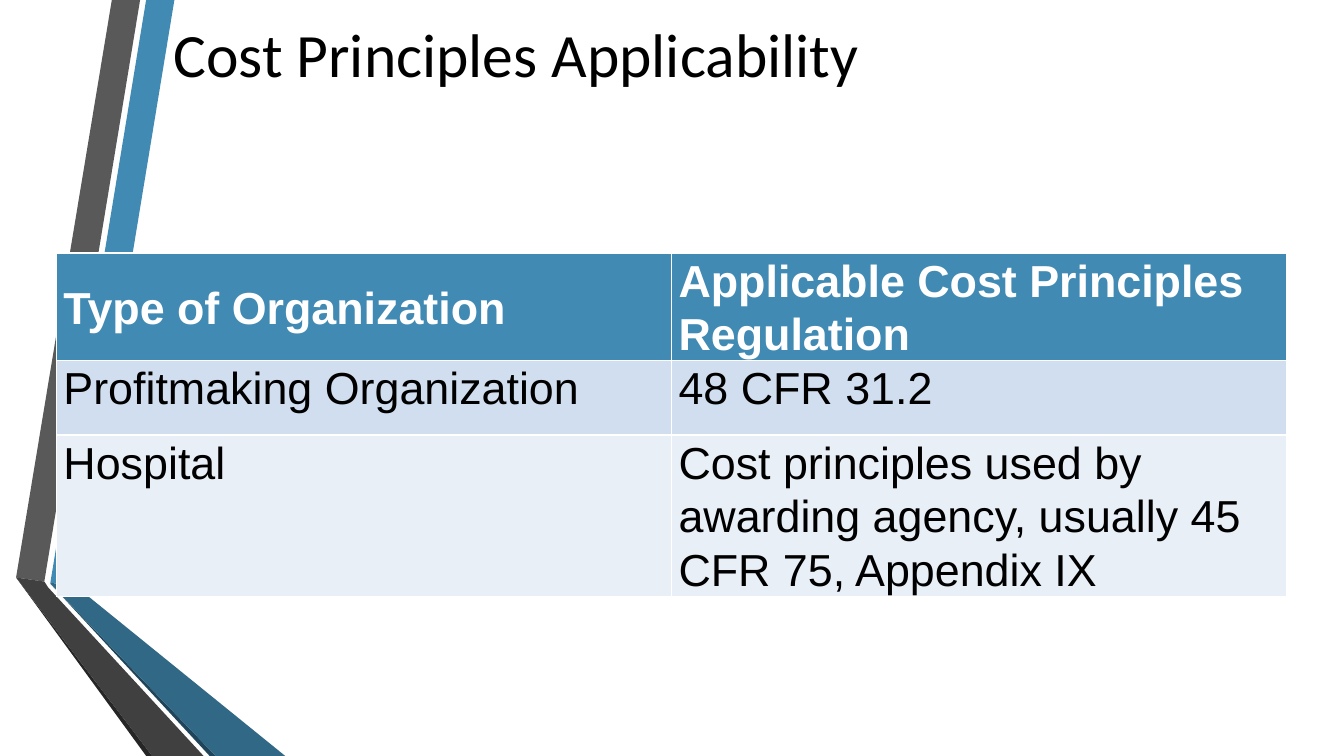
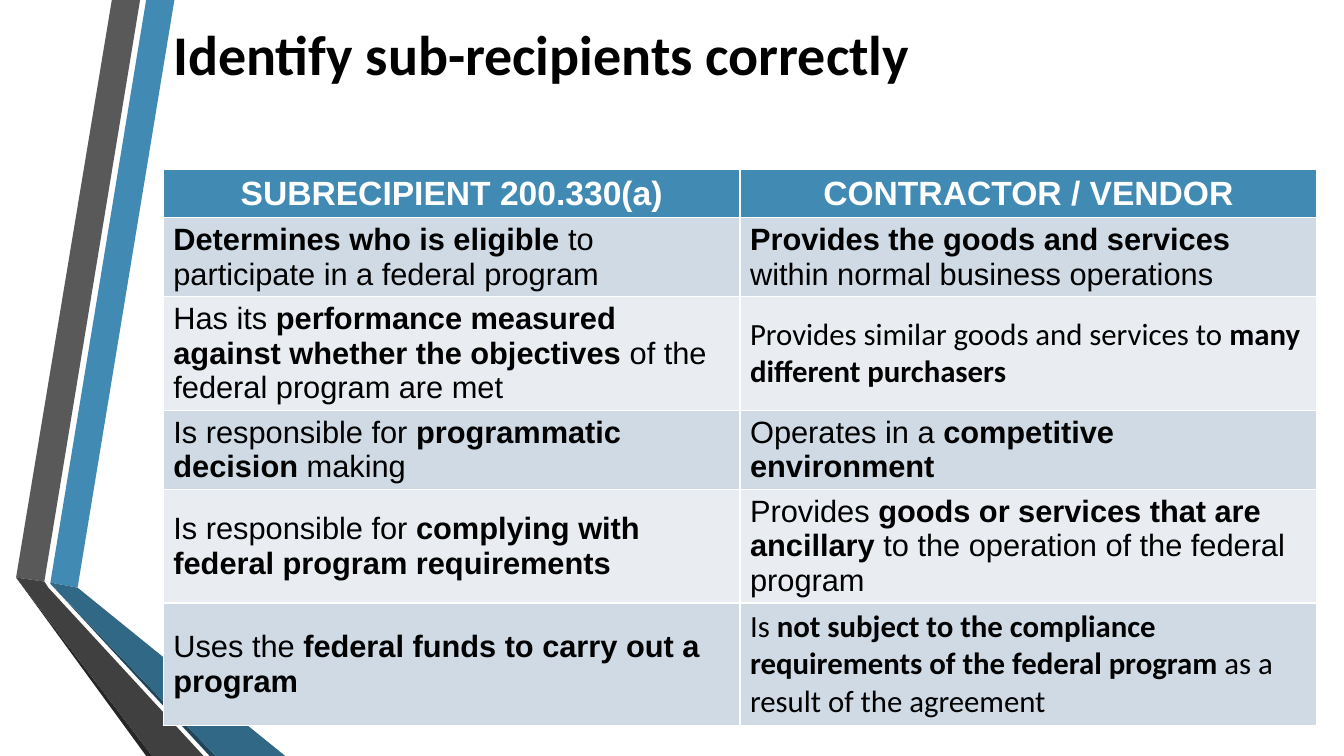
import pptx
import pptx.dml.color
import pptx.enum.text
import pptx.util

Inches = pptx.util.Inches
Pt = pptx.util.Pt
RGBColor = pptx.dml.color.RGBColor
Align = pptx.enum.text.PP_ALIGN
Anchor = pptx.enum.text.MSO_ANCHOR

BLUE = RGBColor(0x41, 0x8A, 0xB3)
MID_BLUE = RGBColor(0x31, 0x68, 0x86)
DARK_BLUE = RGBColor(0x20, 0x45, 0x5A)
GRAY = RGBColor(0x59, 0x59, 0x59)
MID_GRAY = RGBColor(0x40, 0x40, 0x40)
DARK_GRAY = RGBColor(0x26, 0x26, 0x26)
WHITE = RGBColor(0xFF, 0xFF, 0xFF)
BLACK = RGBColor(0, 0, 0)

RIBBONS = [
    (BLUE, [(0.5, 5.78), (0.77, 5.83), (1.73, 0), (1.45, 0)]),
    (GRAY, [(1.39, 0), (1.11, 0), (0.16, 5.73), (0.44, 5.77)]),
    (DARK_GRAY, [(0.16, 5.73), (1.45, 7.5), (1.51, 7.5)]),
    (DARK_BLUE, [(0.5, 5.79), (2.08, 7.5), (2.14, 7.5)]),
    (MID_BLUE, [(0.5, 5.79), (2.14, 7.5), (2.83, 7.5), (0.77, 5.83), (0.5, 5.78)]),
    (MID_GRAY, [(2.02, 7.5), (0.48, 5.83), (0.44, 5.77), (0.16, 5.73), (1.51, 7.5)]),
]

# Text between asterisks is bold; a cell given as a pair names its own font.
PAGES = [
    dict(
        title="Cost Principles Applicability", title_size=44, title_bold=False,
        place=(0.56, 2.51), column=6.1, heights=[1.06, 0.74, 1.6],
        sizes=(32, 32), header_align=Align.LEFT, body_anchor=Anchor.TOP,
        margins=(0.07, 0), spacing=1.07,
        bands=(RGBColor(0xD0, 0xDE, 0xEF), RGBColor(0xE9, 0xEF, 0xF7)),
        rows=[
            ("*Type of Organization*", "*Applicable Cost Principles Regulation*"),
            ("Profitmaking Organization", "48 CFR 31.2"),
            ("Hospital",
             "Cost principles used by awarding agency, usually 45 CFR 75, Appendix IX"),
        ],
    ),
    dict(
        title="Identify sub-recipients correctly", title_size=40, title_bold=True,
        place=(1.62, 1.68), column=5.72,
        heights=[0.48, 0.78, 1.12, 0.78, 1.13, 1.21],
        sizes=(24, 22), header_align=Align.CENTER, body_anchor=Anchor.MIDDLE,
        margins=(0.1, 0.05), spacing=1.0,
        bands=(RGBColor(0xCF, 0xDA, 0xE5), RGBColor(0xE9, 0xED, 0xF2)),
        rows=[
            ("*SUBRECIPIENT 200.330(a)*", "*CONTRACTOR / VENDOR*"),
            ("*Determines who is eligible* to participate in a federal program",
             "*Provides the goods and services* within normal business operations"),
            ("Has its *performance measured against whether the objectives*"
             " of the federal program are met",
             ("Calibri",
              "Provides similar goods and services to *many different purchasers*")),
            ("Is responsible for *programmatic decision* making",
             "Operates in a *competitive environment*"),
            ("Is responsible for *complying with federal program requirements*",
             "Provides *goods or services that are ancillary *"
             "to the operation of the federal program"),
            ("Uses the *federal funds to carry out a program*",
             ("Calibri",
              "Is *not subject to the compliance requirements of the federal program*"
              " as a result of the agreement")),
        ],
    ),
]


def add_span(para, text, font, size, color, bold):
    span = para.add_run()
    span.text = text
    span.font.name = font
    span.font.size = Pt(size)
    span.font.color.rgb = color
    span.font.bold = bold


deck = pptx.Presentation()
deck.slide_width = Inches(13.33)
deck.slide_height = Inches(7.5)
layout = deck.slide_layouts.get_by_name("Title Only")

title_frame = layout.placeholders[0]
title_frame.left, title_frame.top = Inches(1.62), Inches(-0.39)
title_frame.width, title_frame.height = Inches(10.96), Inches(1.92)

pages = [deck.slides.add_slide(layout) for content in PAGES]

# Only slides can build freeforms, so each ribbon is moved to the master behind its text.
master_tree = deck.slide_master.element.cSld.spTree
for position, (color, points) in enumerate(RIBBONS):
    corners = [(Inches(x), Inches(y)) for x, y in points]
    builder = pages[0].shapes.build_freeform(*corners[0])
    builder.add_line_segments(corners[1:], close=True)
    ribbon = builder.convert_to_shape()
    ribbon.name = f"Ribbon {position + 1}"
    ribbon.fill.solid()
    ribbon.fill.fore_color.rgb = color
    ribbon.line.fill.background()
    ribbon.shadow.inherit = False
    master_tree.insert(2 + position, ribbon.element)

for page, content in zip(pages, PAGES):
    title = page.shapes.title.text_frame
    title.vertical_anchor = Anchor.MIDDLE
    para = title.paragraphs[0]
    para.alignment = Align.LEFT
    para.line_spacing = 0.9
    add_span(para, content["title"], "Calibri", content["title_size"], BLACK,
             content["title_bold"])

    left, top = content["place"]
    heights = content["heights"]
    table = page.shapes.add_table(
        len(heights), 2, Inches(left), Inches(top),
        Inches(2 * content["column"]), Inches(sum(heights))).table
    for column in table.columns:
        column.width = Inches(content["column"])

    side, edge = content["margins"]
    for number, (height, texts) in enumerate(zip(heights, content["rows"])):
        table.rows[number].height = Inches(height)
        header = number == 0
        fill = BLUE if header else content["bands"][(number - 1) % 2]
        size = content["sizes"][0 if header else 1]
        for cell, text in zip(table.rows[number].cells, texts):
            font, text = text if isinstance(text, tuple) else ("Arial", text)
            cell.fill.solid()
            cell.fill.fore_color.rgb = fill
            cell.vertical_anchor = Anchor.MIDDLE if header else content["body_anchor"]
            cell.margin_left = cell.margin_right = Inches(side)
            cell.margin_top = cell.margin_bottom = Inches(edge)
            para = cell.text_frame.paragraphs[0]
            para.alignment = content["header_align"] if header else Align.LEFT
            para.line_spacing = content["spacing"]
            for index, part in enumerate(text.split("*")):
                if part:
                    add_span(para, part, font, size, WHITE if header else BLACK,
                             index % 2 == 1)

deck.save("out.pptx")
